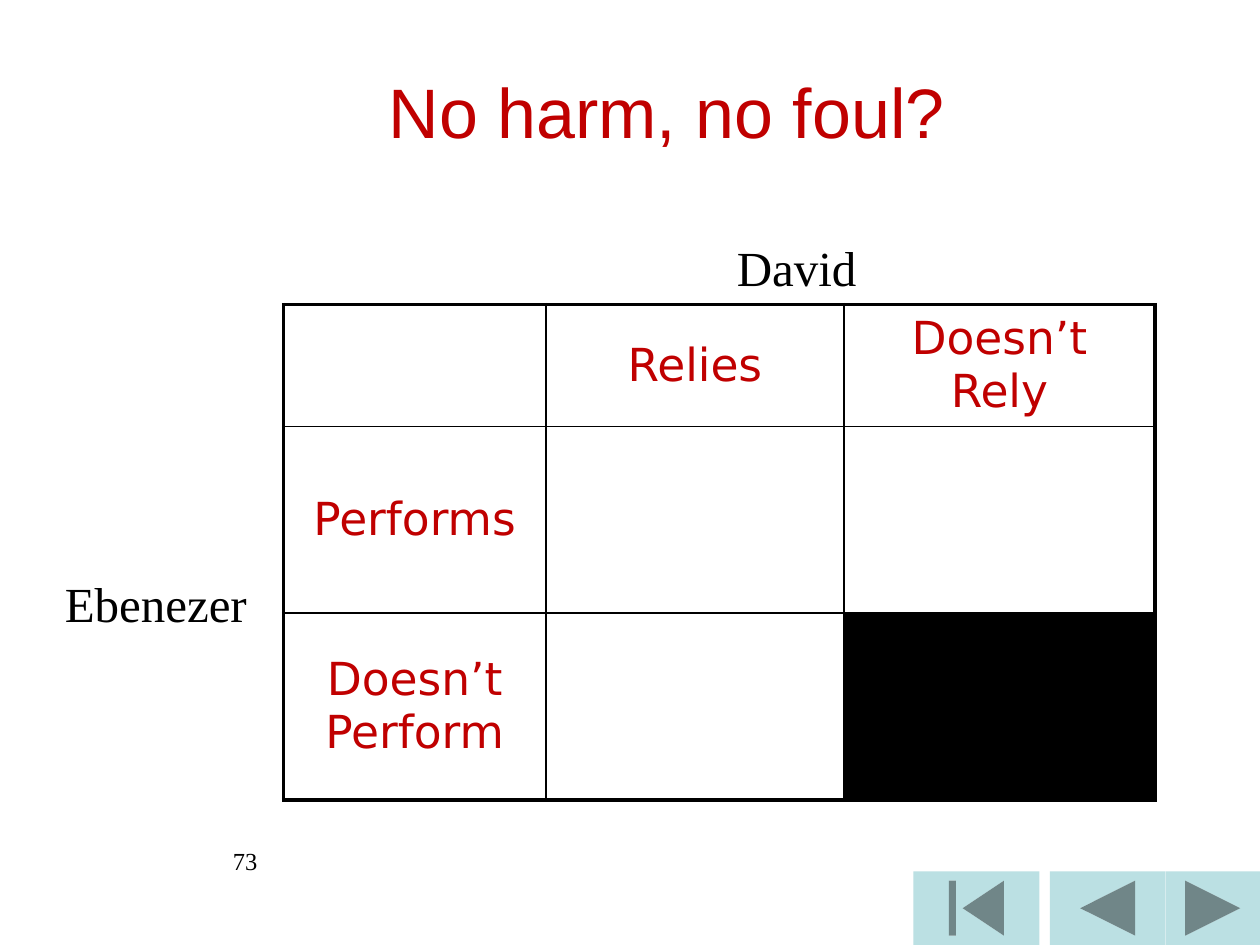
from lxml import etree
from pptx import Presentation
from pptx.dml.color import RGBColor
from pptx.enum.shapes import MSO_SHAPE
from pptx.enum.text import MSO_ANCHOR, PP_ALIGN
from pptx.oxml.ns import qn
from pptx.util import Pt

PX = 7620
BLACK = RGBColor(0, 0, 0)
RED = RGBColor(0xC0, 0, 0)
TEAL = RGBColor(0xBB, 0xE0, 0xE3)
SERIF = "Times New Roman"
SANS = "Arial"
CELL = "DejaVu Sans"
LEFT, CENTER = PP_ALIGN.LEFT, PP_ALIGN.CENTER
TOP, MIDDLE = MSO_ANCHOR.TOP, MSO_ANCHOR.MIDDLE
BACK = MSO_SHAPE.ACTION_BUTTON_BACK_OR_PREVIOUS
START = MSO_SHAPE.ACTION_BUTTON_BEGINNING
NEXT = MSO_SHAPE.ACTION_BUTTON_FORWARD_OR_NEXT

COLS = [250, 284, 296]
ROWS = [116, 178, 178]
HEADS = ["Relies", "Doesn’t Rely"]
SIDES = ["Performs", "Doesn’t Perform"]
THICK, THIN = 2.25, 1


def emu(*sizes):
    return [size * PX for size in sizes]


def style(frame, text, size, font, color, align):
    frame.text = text
    para = frame.paragraphs[0]
    para.alignment = align
    for run in para.runs:
        run.font.size = Pt(size)
        run.font.name = font
        run.font.color.rgb = color


def label(slide, box, text, size, font=SERIF, color=BLACK, align=LEFT, anchor=TOP):
    frame = slide.shapes.add_textbox(*emu(*box)).text_frame
    frame.word_wrap = True
    frame.vertical_anchor = anchor
    style(frame, text, size, font, color, align)


def buttons(slide, box):
    left, top, width, height = box
    for kind, start, end in [(BACK, 130, 240), (START, 0, 120), (NEXT, 240, width)]:
        shape = slide.shapes.add_shape(kind, *emu(left + start, top, end - start, height))
        shape.shadow.inherit = False
        shape.fill.solid()
        shape.fill.fore_color.rgb = TEAL
        shape.line.fill.background()


def border(cell, row, col):
    last_row, last_col = len(ROWS) - 1, len(COLS) - 1
    edges = {"L": col == 0, "R": col == last_col, "T": row == 0, "B": row == last_row}
    props = cell._tc.get_or_add_tcPr()
    for side, outer in edges.items():
        line = etree.SubElement(props, qn("a:ln" + side))
        line.set("w", str(Pt(THICK if outer else THIN)))
        fill = etree.SubElement(line, qn("a:solidFill"))
        etree.SubElement(fill, qn("a:srgbClr")).set("val", str(BLACK))


def matrix(slide, box):
    table = slide.shapes.add_table(len(ROWS), len(COLS), *emu(*box)).table
    table.first_row = False
    table.horz_banding = False
    for col, width in enumerate(COLS):
        table.columns[col].width = width * PX
    for row, height in enumerate(ROWS):
        table.rows[row].height = height * PX
        for col in range(len(COLS)):
            cell = table.cell(row, col)
            border(cell, row, col)
            cell.fill.background()
    names = [(0, col, text) for col, text in enumerate(HEADS, 1)]
    names += [(row, 0, text) for row, text in enumerate(SIDES, 1)]
    for row, col, text in names:
        cell = table.cell(row, col)
        cell.vertical_anchor = MIDDLE
        style(cell.text_frame, text, 26, CELL, RED, CENTER)
    dark = table.cell(2, 2)
    dark.fill.solid()
    dark.fill.fore_color.rgb = BLACK


def main():
    deck = Presentation()
    deck.slide_width, deck.slide_height = emu(1200, 900)
    slide = deck.slides.add_slide(deck.slide_layouts[6])
    buttons(slide, (870, 830, 330, 70))
    label(slide, (210, 800, 730, 62), "73", 14)
    matrix(slide, (270, 290, sum(COLS), sum(ROWS)))
    label(slide, (690, 220, 206, 68), "David", 28)
    label(slide, (50, 540, 220, 70), "Ebenezer", 28)
    label(slide, (70, 30, 1130, 150), "No harm, no foul?", 40, SANS, RED, CENTER, MIDDLE)
    deck.save("out.pptx")


if __name__ == "__main__":
    main()
